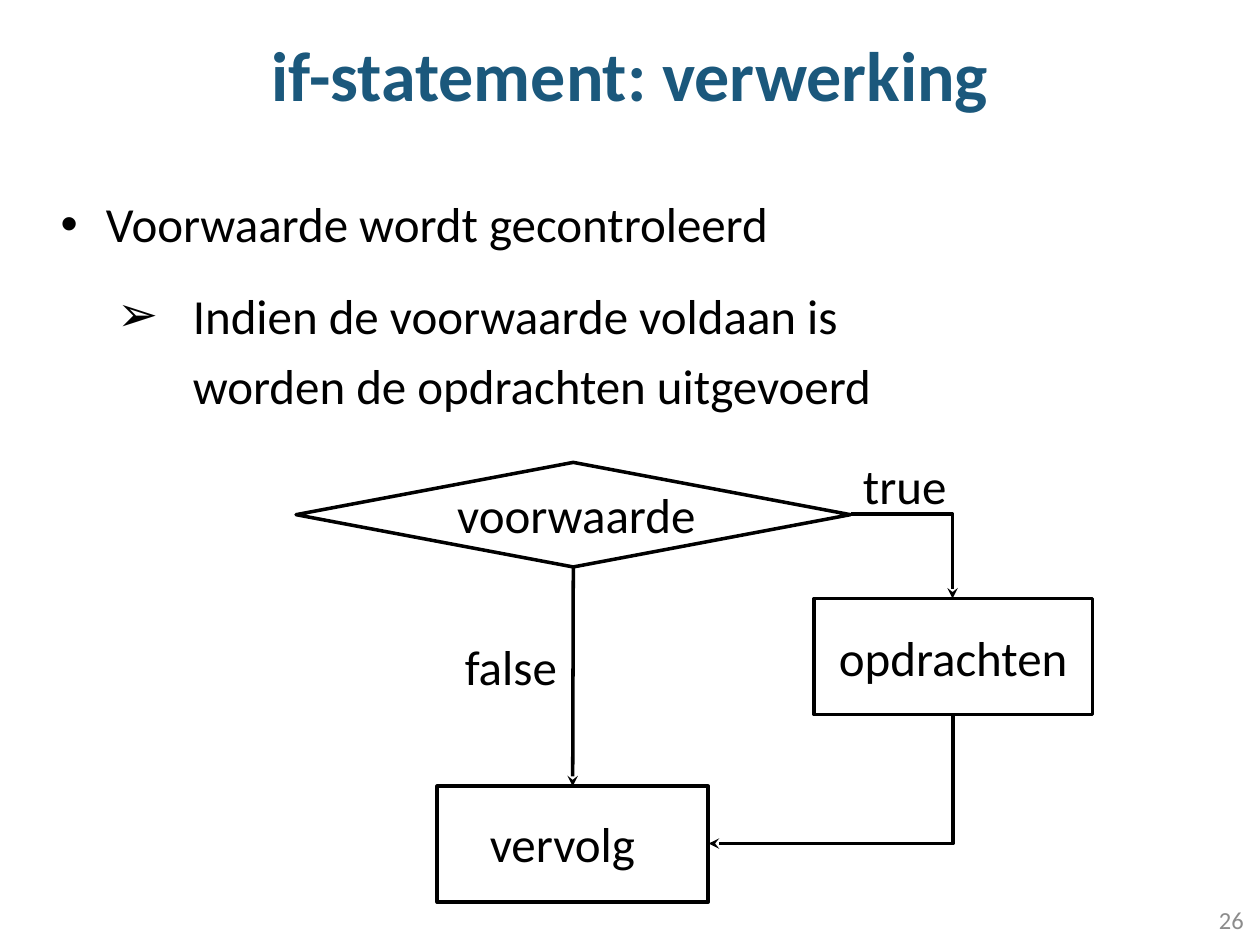
from lxml import etree
from pptx import Presentation
from pptx.dml.color import RGBColor
from pptx.enum import shapes, text
from pptx.oxml.ns import qn
from pptx.util import Inches, Pt

BLACK = RGBColor(0, 0, 0)
WHITE = RGBColor(255, 255, 255)
BLUE = RGBColor(0x1B, 0x58, 0x7C)
GRAY = RGBColor(0x8C, 0x8C, 0x8C)
ALIGN = text.PP_ALIGN
KIND = shapes.MSO_SHAPE
LINK = shapes.MSO_CONNECTOR


def style(par, size=28, color=BLACK, bold=False):
    for run in par.runs:
        font = run.font
        font.name = "Calibri"
        font.size = Pt(size)
        font.bold = bold
        font.color.rgb = color


def arrow(kind, *ends):
    link = slide.shapes.add_connector(kind, *map(Inches, ends))
    link.line.color.rgb = BLACK
    link.line.width = Pt(2)
    etree.SubElement(link.line._get_or_add_ln(), qn("a:tailEnd"), type="stealth")
    etree.SubElement(link._element.spPr, qn("a:effectLst"))
    return link


deck = Presentation()
deck.slide_width = Inches(10)
deck.slide_height = Inches(7.5)
slide = deck.slides.add_slide(deck.slide_layouts[1])

title, body = slide.placeholders
title.left, title.top, title.width, title.height = map(Inches, (0, 0, 10, 1.25))
title.text_frame.text = "if-statement: verwerking"
head = title.text_frame.paragraphs[0]
head.alignment = ALIGN.CENTER
head.line_spacing = 0.9
style(head, 40, BLUE, True)

body.left, body.top, body.width, body.height = map(Inches, (0.25, 1.54, 8.33, 5.25))
body.text_frame.text = (
    "Voorwaarde wordt gecontroleerd\n"
    "Indien de voorwaarde voldaan is\vworden de opdrachten uitgevoerd"
)
rules = [("•", 0.49, -0.36, 0.9), ("➢", 1.18, -0.6, Pt(40))]
for level, (par, rule) in enumerate(zip(body.text_frame.paragraphs, rules)):
    mark, left, hang, pitch = rule
    par.level = level
    par.line_spacing = pitch
    par.space_before = Pt(12)
    props = par._p.get_or_add_pPr()
    props.set("marL", str(Inches(left)))
    props.set("indent", str(Inches(hang)))
    etree.SubElement(props, qn("a:buFont"), typeface="Arial")
    etree.SubElement(props, qn("a:buChar"), char=mark)
    style(par)

nodes = []
for kind, *area in [
    (KIND.FLOWCHART_DECISION, 2.35, 3.67, 4.4, 0.83),
    (KIND.RECTANGLE, 3.47, 6.24, 2.15, 0.92),
    (KIND.RECTANGLE, 6.46, 4.75, 2.21, 0.92),
]:
    node = slide.shapes.add_shape(kind, *map(Inches, area))
    node.shadow.inherit = False
    node.fill.solid()
    node.fill.fore_color.rgb = WHITE
    node.line.color.rgb = BLACK
    node.line.width = Pt(2)
    nodes.append(node)
test, rest, task = nodes

frame = task.text_frame
frame.text = "opdrachten"
frame.word_wrap = False
frame.vertical_anchor = text.MSO_ANCHOR.MIDDLE
frame.paragraphs[0].alignment = ALIGN.CENTER
style(frame.paragraphs[0])

down = arrow(LINK.STRAIGHT, 4.55, 4.5, 4.55, 6.24)
down.begin_connect(test, 2)
down.end_connect(rest, 0)

yes = arrow(LINK.ELBOW, 6.75, 4.08, 7.56, 4.75)
back = arrow(LINK.ELBOW, 6.08, 5.21, 7.11, 7.15)
for bend in (yes, back):
    bend._element.spPr.find(qn("a:prstGeom")).set("prst", "bentConnector2")
back._element.spPr.find(qn("a:xfrm")).set("rot", str(90 * 60000))

for words, *area in [
    ("voorwaarde", 3.53, 3.8, 2.25, 0.57),
    ("true", 6.75, 3.57, 1.08, 0.57),
    ("false", 3.59, 5, 1.08, 0.57),
    ("vervolg", 3.79, 6.41, 1.76, 0.57),
    ("26", 7.72, 7.1, 2.25, 0.4),
]:
    label = slide.shapes.add_textbox(*map(Inches, area)).text_frame
    label.word_wrap = True
    label.text = words
    style(label.paragraphs[0])

label.vertical_anchor = text.MSO_ANCHOR.MIDDLE
label.paragraphs[0].alignment = ALIGN.RIGHT
style(label.paragraphs[0], 14, GRAY)

deck.save("out.pptx")
